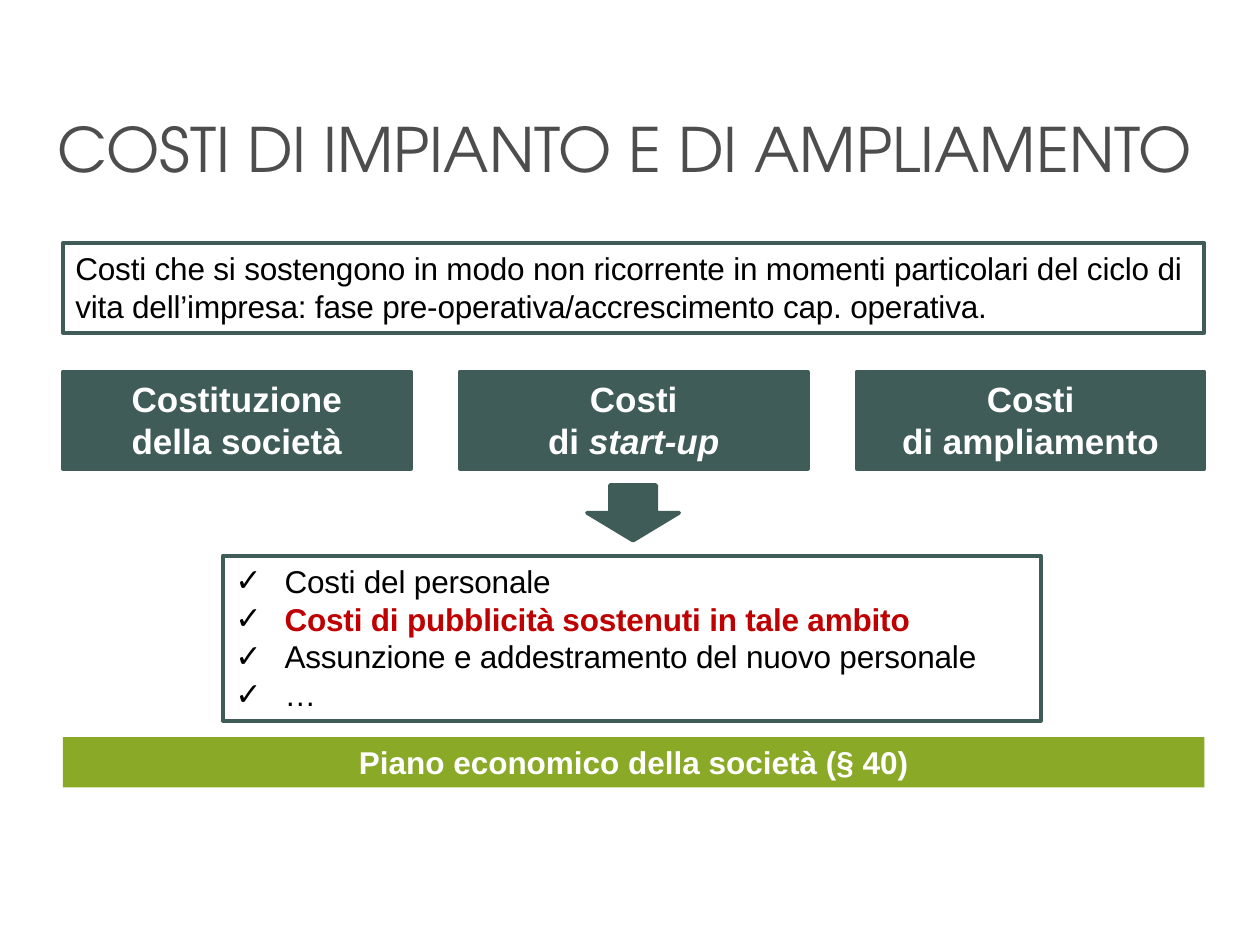
from pptx import Presentation
from pptx.dml.color import RGBColor
from pptx.enum.shapes import MSO_SHAPE as SHAPE
from pptx.enum.text import MSO_ANCHOR as ANCHOR, PP_ALIGN as ALIGN
from pptx.oxml.ns import qn
from pptx.util import Inches, Pt
from lxml.etree import SubElement

COLORS = {"teal": "405C58", "green": "89A927", "red": "C00000",
          "title": "4D4D4D", "black": "000000", "white": "FFFFFF"}

TITLE = "COSTI DI IMPIANTO E DI AMPLIAMENTO"
DEFINITION = ("Costi che si sostengono in modo non ricorrente in momenti particolari "
              "del ciclo di vita dell’impresa: fase pre-operativa/accrescimento cap. operativa.")
CATEGORIES = [
    [("Costituzione", ""), ("\n", ""), ("della società", "")],
    [("Costi", ""), ("\n", ""), ("di ", ""), ("start-up", "i")],
    [("Costi", ""), ("\n", ""), ("di ampliamento", "")],
]
EXAMPLES = [
    ("Costi del personale", False),
    ("Costi di pubblicità sostenuti in tale ambito", True),
    ("Assunzione e addestramento del nuovo personale", False),
    ("…", False),
]
PLAN = "Piano economico della società (§ 40)"

LEFT, WIDTH = 0.5, 9.06
BOX_W = 2.76
GAP = (WIDTH - len(CATEGORIES) * BOX_W) / (len(CATEGORIES) - 1)


def rgb(name):
    return RGBColor.from_string(COLORS[name])


def add_block(slide, x, y, w, h, fill=None, line="teal", kind=SHAPE.RECTANGLE):
    sp = slide.shapes.add_shape(kind, Inches(x), Inches(y), Inches(w), Inches(h))
    sp.shadow.inherit = False
    if fill:
        sp.fill.solid()
        sp.fill.fore_color.rgb = rgb(fill)
    else:
        sp.fill.background()
    if line:
        sp.line.color.rgb = rgb(line)
        sp.line.width = Pt(2.25)
    else:
        sp.line.fill.background()
    sp.text_frame.word_wrap = True
    sp.text_frame.vertical_anchor = ANCHOR.TOP
    return sp


def add_run(p, text, size, color, bold=False, italic=False, font="Arial", spacing=None):
    r = p.add_run()
    r.text = text
    r.font.size = Pt(size)
    r.font.name = font
    r.font.color.rgb = rgb(color)
    r.font.bold = bold
    r.font.italic = italic
    if spacing is not None:
        r.font._element.set("spc", str(spacing))


def add_check(p):
    pPr = p._p.get_or_add_pPr()
    pPr.set("marL", str(Inches(0.39)))
    pPr.set("indent", str(-Inches(0.39)))
    color = SubElement(pPr, qn("a:buClr"))
    SubElement(color, qn("a:srgbClr")).set("val", COLORS["black"])
    SubElement(pPr, qn("a:buFont")).set("typeface", "Arial")
    SubElement(pPr, qn("a:buChar")).set("char", "✓")


prs = Presentation()
prs.slide_width, prs.slide_height = Inches(10), Inches(7.5)
slide = prs.slides.add_slide(prs.slide_layouts[6])

title = slide.shapes.add_textbox(Inches(0.36), Inches(0.9), Inches(9.28), Inches(1.08))
title.text_frame.word_wrap = True
p = title.text_frame.paragraphs[0]
p.line_spacing = 0.9
add_run(p, TITLE, 35, "title", font="TeX Gyre Adventor")

definition = add_block(slide, LEFT, 1.93, WIDTH, 0.71)
p = definition.text_frame.paragraphs[0]
p.alignment = ALIGN.LEFT
add_run(p, DEFINITION, 18, "black", spacing=-10)

for i, runs in enumerate(CATEGORIES):
    box = add_block(slide, LEFT + i * (BOX_W + GAP), 2.95, BOX_W, 0.77, fill="teal")
    p = box.text_frame.paragraphs[0]
    p.alignment = ALIGN.CENTER
    for text, style in runs:
        if text == "\n":
            p.add_line_break()
        else:
            add_run(p, text, 20, "white", bold=True, italic=style == "i")

add_block(slide, 4.66, 3.85, 0.73, 0.44, fill="teal", kind=SHAPE.DOWN_ARROW)

tf = add_block(slide, 1.77, 4.41, 6.49, 1.31).text_frame
for i, (text, key) in enumerate(EXAMPLES):
    p = tf.add_paragraph() if i else tf.paragraphs[0]
    p.alignment = ALIGN.LEFT
    add_check(p)
    add_run(p, text, 18, "red" if key else "black", bold=key, spacing=-10)

plan = add_block(slide, LEFT, 5.85, WIDTH, 0.4, fill="green", line=None)
p = plan.text_frame.paragraphs[0]
p.alignment = ALIGN.CENTER
add_run(p, PLAN, 18, "white", bold=True)

prs.save("out.pptx")
